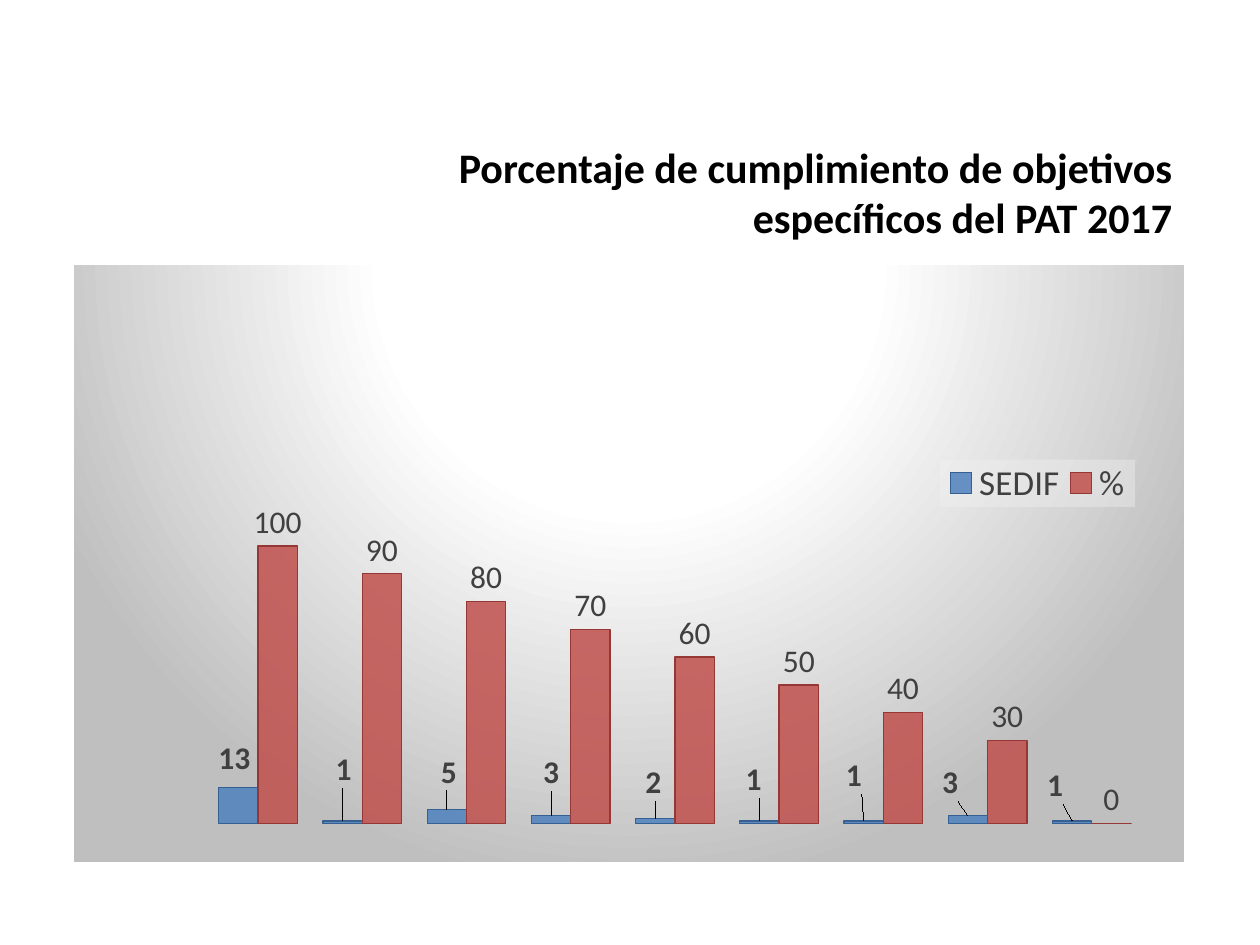
from lxml import etree
from pptx import Presentation
from pptx.chart.data import CategoryChartData
from pptx.dml.color import RGBColor
from pptx.enum import chart as charts, text
from pptx.oxml import parse_xml
from pptx.oxml.ns import nsdecls, qn
from pptx.util import Emu, Pt

TITLE = "Porcentaje de cumplimiento de objetivos específicos del PAT 2017"
CATEGORIES = [str(number) for number in range(1, 11)]
SERIES = [
    dict(name="SEDIF", values=[None, 13, 1, 5, 3, 2, 1, 1, 3, 1],
         fill="4F81BD", line="376092", bold=True),
    dict(name="%", values=[None, 100, 90, 80, 70, 60, 50, 40, 30, 0],
         fill="C0504D", line="953735", bold=False),
]
# Shift in px of each SEDIF label from its place above the bar
LABEL_SHIFTS = [(-4, -5), (1, -28), (2, -14), (0, -19), (-2, -12),
                (-6, -18), (-10, -22), (-18, -9), (-17, -12)]
FONT, GREY = "Calibri", "404040"
TITLE_BOX = (386, 144, 799, 96)
CHART_BOX = (74, 266, 1110, 596)
PLOT_AREA = (0.025, 0.377, 0.939, 0.559)
LEGEND_AREA = (0.78, 0.325, 0.176, 0.079)
BACKDROP = [(0, "FFFFFF"), (39, "FFFFFF"), (100, "BFBFBF")]


def px(count):
    return Emu(round(count * 914400 / 126))


def color(value):
    return RGBColor.from_string(value)


def style(font, size, value, bold=False):
    font.name, font.size, font.bold = FONT, Pt(size), bold
    font.color.rgb = color(value)


def manual_layout(numbers, edge=True):
    """Layout element: an area in chart fractions, or a shift when edge is False."""
    modes = '<c:xMode val="edge"/><c:yMode val="edge"/>' if edge else ""
    if edge:
        modes = '<c:layoutTarget val="inner"/>' + modes
    sizes = "".join(f'<c:{key} val="{number:.4f}"/>'
                    for key, number in zip("xywh", numbers))
    return parse_xml(f'<c:layout {nsdecls("c")}><c:manualLayout>{modes}{sizes}'
                     "</c:manualLayout></c:layout>")


def put_layout(parent, index, layout):
    for old in parent.findall(qn("c:layout")):
        parent.remove(old)
    parent.insert(index, layout)


def shape_properties(fill):
    return parse_xml(f'<c:spPr {nsdecls("c", "a")}>{fill}<a:ln><a:noFill/></a:ln></c:spPr>')


def add_title(page):
    box = page.shapes.title
    box.left, box.top, box.width, box.height = map(px, TITLE_BOX)
    frame = box.text_frame
    frame.text, frame.word_wrap = TITLE, True
    frame.vertical_anchor = text.MSO_ANCHOR.MIDDLE
    para = frame.paragraphs[0]
    para.alignment = text.PP_ALIGN.RIGHT
    style(para.runs[0].font, 24, "000000", True)


def add_bar_chart(page):
    data = CategoryChartData()
    data.categories = CATEGORIES
    for entry in SERIES:
        data.add_series(entry["name"], entry["values"])
    chart = page.shapes.add_chart(charts.XL_CHART_TYPE.COLUMN_CLUSTERED,
                                  *map(px, CHART_BOX), data).chart
    chart.has_title = False
    style(chart.font, 10, "000000")
    chart.category_axis.visible = False
    axis = chart.value_axis
    axis.visible = axis.has_major_gridlines = False
    axis.minimum_scale, axis.maximum_scale = 0, 120
    plot = chart.plots[0]
    plot.gap_width, plot.overlap, plot.vary_by_categories = 65, 0, False
    return chart


def style_series(series, entry):
    form = series.format
    form.fill.solid()
    form.fill.fore_color.rgb = color(entry["fill"])
    tint = series._element.find(".//" + qn("a:srgbClr"))
    etree.SubElement(tint, qn("a:alpha"), val="85000")
    form.line.color.rgb, form.line.width = color(entry["line"]), Pt(0.75)
    labels = series.data_labels
    labels.show_value = True
    labels.position = charts.XL_LABEL_POSITION.OUTSIDE_END
    style(labels.font, 18, GREY, entry["bold"])


def shift_labels(series):
    for index in range(1, len(LABEL_SHIFTS) + 1):
        label = series.points[index].data_label
        label.position = charts.XL_LABEL_POSITION.OUTSIDE_END
        style(label.font, 18, GREY, True)
    for label, (right, down) in zip(series._element.xpath(".//c:dLbl"), LABEL_SHIFTS):
        shift = right / CHART_BOX[2], down / CHART_BOX[3]
        put_layout(label, 1, manual_layout(shift, edge=False))


def place_legend(chart):
    chart.has_legend = True
    legend = chart.legend
    legend.position = charts.XL_LEGEND_POSITION.BOTTOM
    legend.include_in_layout = False
    style(legend.font, 20, GREY)
    element = legend._element
    layout = manual_layout(LEGEND_AREA)
    target = layout.find(".//" + qn("c:layoutTarget"))
    target.getparent().remove(target)
    put_layout(element, 1, layout)
    element.find(qn("c:overlay")).addnext(shape_properties(
        '<a:solidFill><a:srgbClr val="F2F2F2"><a:alpha val="39000"/></a:srgbClr></a:solidFill>'))


def paint_backdrop(chart):
    stops = "".join(f'<a:gs pos="{place * 1000}"><a:srgbClr val="{value}"/></a:gs>'
                    for place, value in BACKDROP)
    fill = (f'<a:gradFill><a:gsLst>{stops}</a:gsLst><a:path path="circle">'
            '<a:fillToRect l="50000" t="-80000" r="50000" b="180000"/></a:path></a:gradFill>')
    chart._chartSpace.find(qn("c:chart")).addnext(shape_properties(fill))


def main():
    deck = Presentation()
    deck.slide_width, deck.slide_height = px(1260), px(945)
    page = deck.slides.add_slide(deck.slide_layouts[5])
    add_title(page)
    chart = add_bar_chart(page)
    for series, entry in zip(chart.plots[0].series, SERIES):
        style_series(series, entry)
    shift_labels(chart.plots[0].series[0])
    put_layout(chart._chartSpace.find(".//" + qn("c:plotArea")), 0, manual_layout(PLOT_AREA))
    place_legend(chart)
    paint_backdrop(chart)
    deck.save("out.pptx")


if __name__ == "__main__":
    main()
